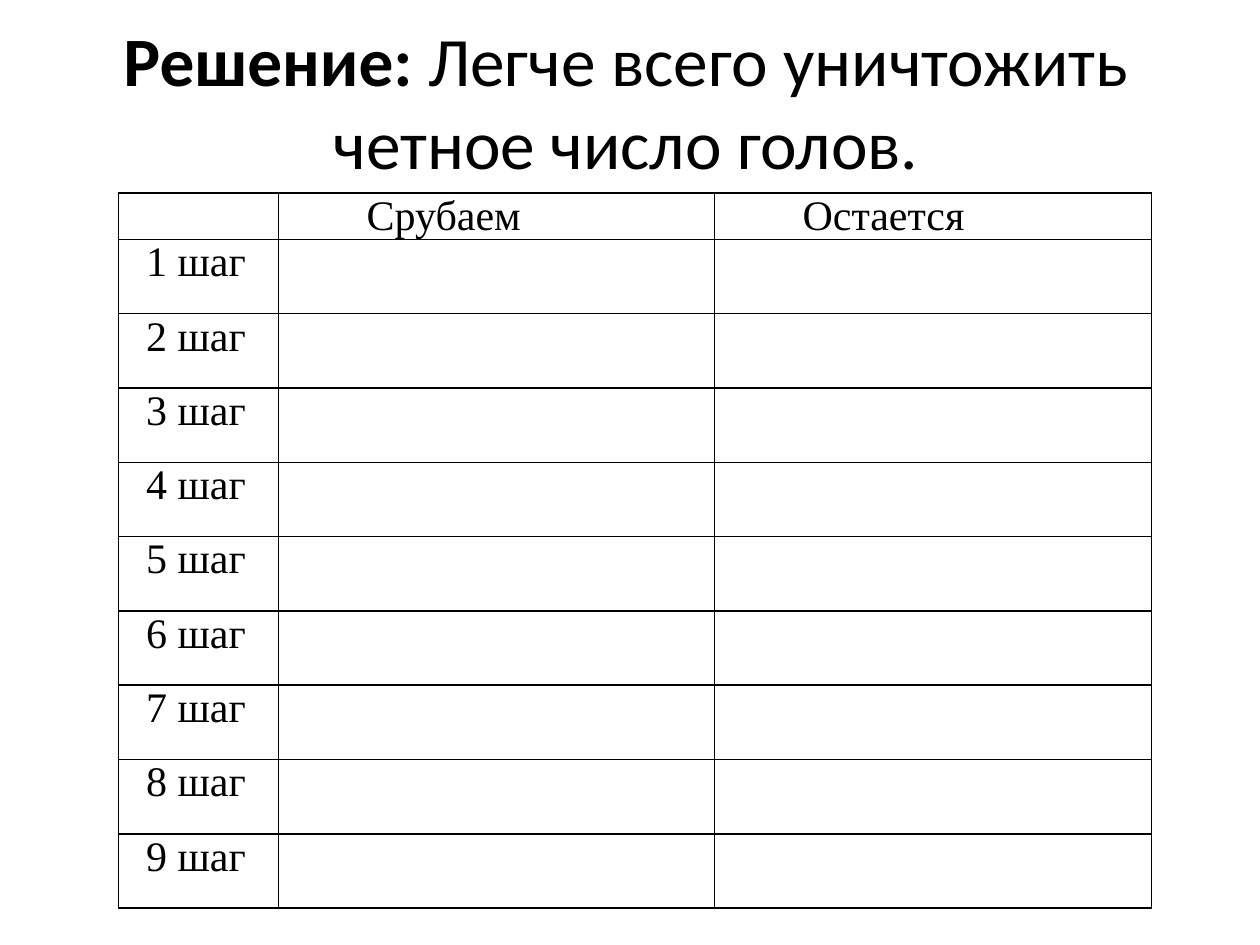
from lxml import etree
from pptx import Presentation
from pptx import util as u
from pptx.dml.color import RGBColor
from pptx.enum import text
from pptx.oxml.ns import qn

TITLE = [("Решение:", True), (" Легче всего уничтожить четное число голов.\v", False)]
HEADINGS = ["", "Срубаем", "Остается"]
ROWS = [HEADINGS] + [[f"{step} шаг", "", ""] for step in range(1, 10)]
COLUMN_WIDTHS = [1.27, 3.46, 3.47]
HEADER_HEIGHT, STEP_HEIGHT = 0.37, 0.59
HEADING_INDENT, STEP_INDENT = 0.69, 0.21
BLACK, WHITE = "000000", "FFFFFF"


def color(value):
    return RGBColor.from_string(value)


def add_text(para, words, font, size, bold=False):
    span = para.add_run() if "\v" not in words else None
    if span is None:
        words = words.rstrip("\v")
        span = para.add_run()
        para.add_line_break()
    span.text = words
    span.font.name = font
    span.font.size = u.Pt(size)
    span.font.bold = bold
    span.font.color.rgb = color(BLACK)


def add_borders(cell, value=BLACK, width=1):
    """Draw all four cell edges; they must come before the fill in tcPr."""
    props = cell._tc.get_or_add_tcPr()
    for index, side in enumerate(("lnL", "lnR", "lnT", "lnB")):
        line = etree.Element(qn(f"a:{side}"), w=str(u.Pt(width)))
        fill = etree.SubElement(line, qn("a:solidFill"))
        etree.SubElement(fill, qn("a:srgbClr"), val=value)
        props.insert(index, line)


def add_title(slide):
    box = slide.shapes.add_textbox(*map(u.Inches, (0.47, 0.47, 9, 1.25)))
    frame = box.text_frame
    frame.word_wrap = True
    frame.auto_size = text.MSO_AUTO_SIZE.NONE
    frame.vertical_anchor = text.MSO_ANCHOR.MIDDLE
    para = frame.paragraphs[0]
    para.alignment = text.PP_ALIGN.CENTER
    for words, bold in TITLE:
        add_text(para, words, "Calibri", 39.6, bold)
    # The size of the empty line after the closing break
    etree.SubElement(para._p, qn("a:endParaRPr"), sz="3600")


def fill_cell(cell, words, indent):
    cell.margin_left = cell.margin_right = u.Inches(0.01)
    cell.margin_top = cell.margin_bottom = 0
    cell.fill.solid()
    cell.fill.fore_color.rgb = color(WHITE)
    add_borders(cell)
    if words:
        para = cell.text_frame.paragraphs[0]
        para._p.get_or_add_pPr().set("marL", str(u.Inches(indent)))
        add_text(para, words, "Times New Roman", 24)


def add_steps_table(slide):
    heights = [HEADER_HEIGHT] + [STEP_HEIGHT] * (len(ROWS) - 1)
    size = (sum(COLUMN_WIDTHS), sum(heights))
    table = slide.shapes.add_table(
        len(ROWS), len(HEADINGS), *map(u.Inches, (0.94, 1.53, *size))).table
    table.first_row = table.horz_banding = False
    for column, width in zip(table.columns, COLUMN_WIDTHS):
        column.width = u.Inches(width)
    for r, (row, height) in enumerate(zip(ROWS, heights)):
        table.rows[r].height = u.Inches(height)
        for c, words in enumerate(row):
            fill_cell(table.cell(r, c), words, STEP_INDENT if r else HEADING_INDENT)


def main():
    deck = Presentation()
    deck.slide_width, deck.slide_height = u.Inches(10), u.Inches(7.5)
    slide = deck.slides.add_slide(deck.slide_layouts[6])
    add_title(slide)
    add_steps_table(slide)
    deck.save("out.pptx")


if __name__ == "__main__":
    main()
